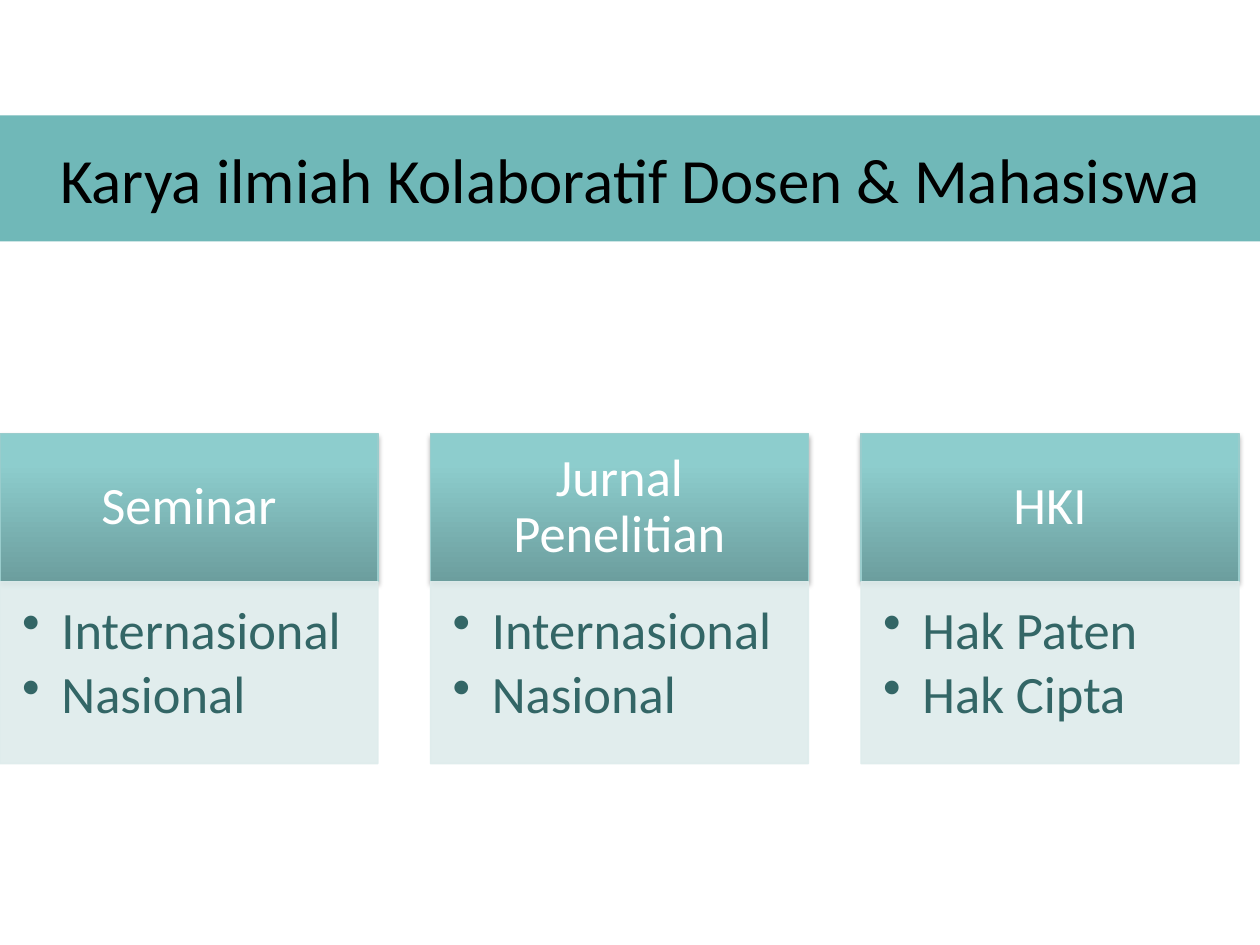
from lxml import etree
from pptx import Presentation
from pptx import util as u
from pptx.dml import color
from pptx.enum import shapes, text
from pptx.oxml import ns

Pt = u.Pt
FONT = "Calibri"
HEADER_STOPS = [(0, "6C9E9E"), (80, "8DCDCD"), (100, "8CCFCF")]
COLUMNS = [
    ("Seminar", ["Internasional", "Nasional"]),
    ("Jurnal Penelitian", ["Internasional", "Nasional"]),
    ("HKI", ["Hak Paten", "Hak Cipta"]),
]
COLUMN_WIDTH, COLUMN_STEP = 216, 246
HEADER_TOP, HEADER_HEIGHT = 247.6, 84.8
PANEL_HEIGHT = 104


def rgb(hex_color):
    return color.RGBColor.from_string(hex_color)


def add_child(parent, tag, **attributes):
    return etree.SubElement(parent, ns.qn(tag), attributes)


def place(shape, left, top, width, height):
    shape.left, shape.top = Pt(left), Pt(top)
    shape.width, shape.height = Pt(width), Pt(height)


def add_run(paragraph, words, size, hex_color):
    run = paragraph.add_run()
    run.text = words
    run.font.size = Pt(size)
    run.font.name = FONT
    run.font.color.rgb = rgb(hex_color)


def add_box(slide, left, top, height, hex_line, margins, anchor):
    """Add a column-wide box; margins run left, top, right, bottom."""
    box = slide.shapes.add_shape(
        shapes.MSO_SHAPE.RECTANGLE, Pt(left), Pt(top), Pt(COLUMN_WIDTH), Pt(height))
    box.line.color.rgb = rgb(hex_line)
    box.line.width = Pt(0.75)
    box.shadow.inherit = False
    frame = box.text_frame
    frame.word_wrap = True
    frame.vertical_anchor = anchor
    (frame.margin_left, frame.margin_top,
     frame.margin_right, frame.margin_bottom) = map(Pt, margins)
    return box


def fill_upward_gradient(shape, stops):
    shape.fill.gradient()
    shape.fill.gradient_angle = 90
    stop_list = shape.element.spPr.find(".//" + ns.qn("a:gsLst"))
    for old_stop in list(stop_list):
        stop_list.remove(old_stop)
    for percent, hex_color in stops:
        stop = add_child(stop_list, "a:gs", pos=str(percent * 1000))
        add_child(stop, "a:srgbClr", val=hex_color)


def add_soft_shadow(shape):
    effects = shape.element.spPr.find(ns.qn("a:effectLst"))
    shadow = add_child(effects, "a:outerShdw", blurRad=str(Pt(3.1)),
                       dist=str(Pt(1.8)), dir="5400000", rotWithShape="0")
    shade = add_child(shadow, "a:srgbClr", val="000000")
    add_child(shade, "a:alpha", val="35000")


def make_translucent(shape, percent):
    """Apply the opacity to both the fill and the line."""
    for shade in shape.element.spPr.iter(ns.qn("a:srgbClr")):
        add_child(shade, "a:alpha", val=str(percent * 1000))


def add_bullet(paragraph, indent):
    properties = paragraph._p.get_or_add_pPr()
    properties.set("marL", str(Pt(indent)))
    properties.set("indent", str(-Pt(indent)))
    add_child(properties, "a:buChar", char="•")


def add_title(slide, words):
    title = slide.shapes.title
    place(title, 0, 66, 720, 72)
    title.fill.solid()
    title.fill.fore_color.rgb = rgb("70B8B8")
    title.text_frame.vertical_anchor = text.MSO_ANCHOR.MIDDLE
    paragraph = title.text_frame.paragraphs[0]
    paragraph.alignment = text.PP_ALIGN.CENTER
    add_run(paragraph, words, 36, "000000")


def add_header(slide, left, heading):
    header = add_box(slide, left, HEADER_TOP, HEADER_HEIGHT, "99CCCC",
                     (16.8, 9.6, 16.8, 9.6), text.MSO_ANCHOR.MIDDLE)
    fill_upward_gradient(header, HEADER_STOPS)
    add_soft_shadow(header)
    paragraph = header.text_frame.paragraphs[0]
    paragraph.alignment = text.PP_ALIGN.CENTER
    paragraph.line_spacing = 0.9
    add_run(paragraph, heading, 30, "FFFFFF")


def add_list_panel(slide, left, items):
    panel = add_box(slide, left, HEADER_TOP + HEADER_HEIGHT, PANEL_HEIGHT, "DEECEC",
                    (12.6, 12.6, 16.8, 18.9), text.MSO_ANCHOR.TOP)
    panel.fill.solid()
    panel.fill.fore_color.rgb = rgb("DEECEC")
    make_translucent(panel, 90)
    frame = panel.text_frame
    for index, item in enumerate(items):
        paragraph = frame.add_paragraph() if index else frame.paragraphs[0]
        add_bullet(paragraph, 22.5)
        paragraph.level = 1
        paragraph.alignment = text.PP_ALIGN.LEFT
        paragraph.line_spacing = 0.9
        paragraph.space_after = Pt(4.5)
        add_run(paragraph, item, 30, "336666")


def main():
    deck = Presentation()
    deck.slide_width, deck.slide_height = Pt(720), Pt(540)
    slide = deck.slides.add_slide(deck.slide_layouts[5])
    add_title(slide, "Karya ilmiah Kolaboratif Dosen & Mahasiswa")
    for index, (heading, items) in enumerate(COLUMNS):
        left = index * COLUMN_STEP
        add_header(slide, left, heading)
        add_list_panel(slide, left, items)
    deck.save("out.pptx")


if __name__ == "__main__":
    main()
